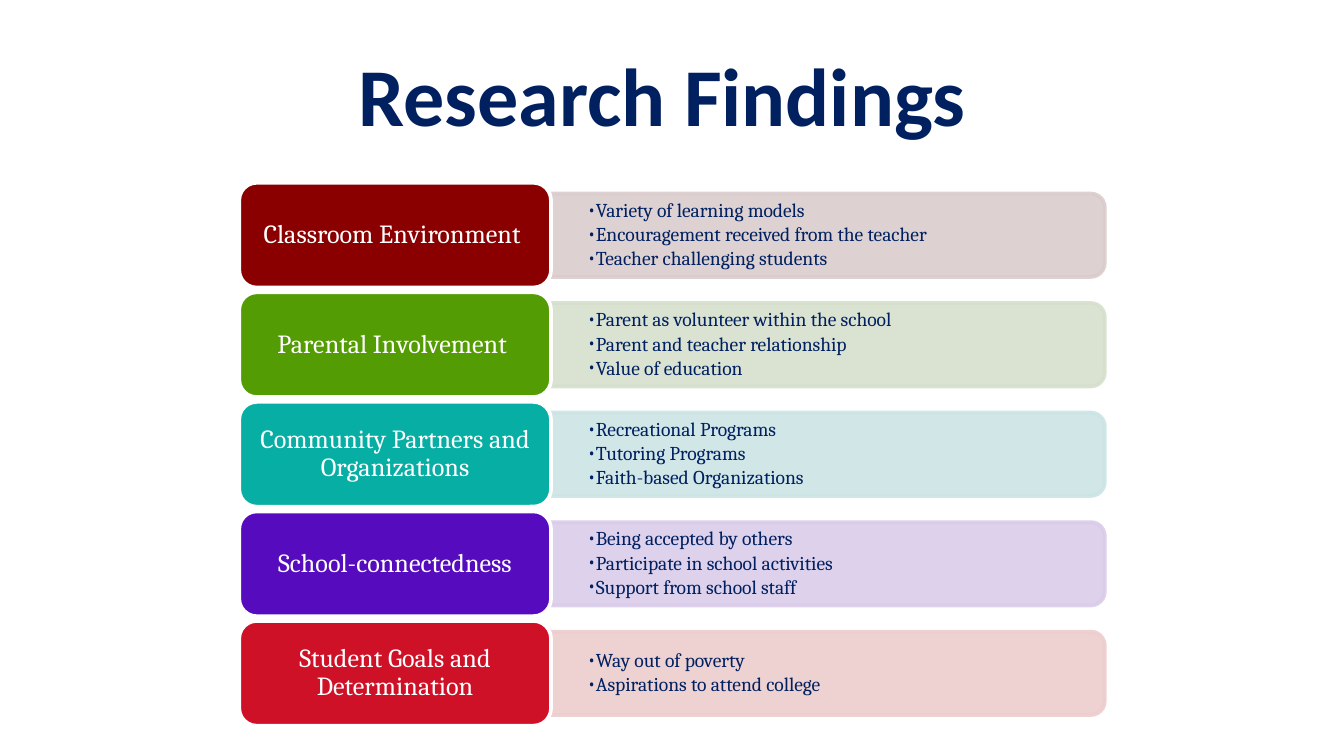
import pptx
import pptx.util
import pptx.dml.color
import pptx.enum.shapes
import pptx.enum.text
import pptx.oxml.ns
import lxml.etree

Inches = pptx.util.Inches
Pt = pptx.util.Pt
RGBColor = pptx.dml.color.RGBColor
MSO_SHAPE = pptx.enum.shapes.MSO_SHAPE
PP_ALIGN = pptx.enum.text.PP_ALIGN
MSO_ANCHOR = pptx.enum.text.MSO_ANCHOR
qn = pptx.oxml.ns.qn

NAVY = RGBColor(0x00, 0x20, 0x60)
WHITE = RGBColor(0xFF, 0xFF, 0xFF)
MAROON, PALE_MAROON = RGBColor(0x8A, 0x00, 0x00), RGBColor(0xDA, 0xCC, 0xCC)
GREEN, PALE_GREEN = RGBColor(0x54, 0x9C, 0x03), RGBColor(0xD6, 0xDF, 0xCC)
TEAL, PALE_TEAL = RGBColor(0x07, 0xAE, 0xA4), RGBColor(0xCC, 0xE4, 0xE4)
PURPLE, PALE_PURPLE = RGBColor(0x56, 0x0C, 0xBE), RGBColor(0xDA, 0xCC, 0xE9)
RED, PALE_RED = RGBColor(0xCE, 0x11, 0x26), RGBColor(0xED, 0xCD, 0xCD)

TITLE = "Research Findings "
FINDINGS = [
    ("Classroom Environment ", MAROON, PALE_MAROON,
     ["Variety of learning models", "Encouragement received from the teacher",
      "Teacher challenging students"]),
    ("Parental Involvement ", GREEN, PALE_GREEN,
     ["Parent as volunteer within the school", "Parent and teacher relationship",
      "Value of education"]),
    ("Community Partners and Organizations", TEAL, PALE_TEAL,
     ["Recreational Programs", "Tutoring Programs", "Faith-based Organizations"]),
    ("School-connectedness", PURPLE, PALE_PURPLE,
     ["Being accepted by others", "Participate in school activities",
      "Support from school staff"]),
    ("Student Goals and Determination", RED, PALE_RED,
     ["Way out of poverty", "Aspirations to attend college"]),
]

FIRST_TOP, LAST_TOP = 1.36, 4.62
ROW_PITCH = (LAST_TOP - FIRST_TOP) / (len(FINDINGS) - 1)
LABEL_LEFT, LABEL_WIDTH, LABEL_HEIGHT = 1.78, 2.32, 0.78
PANEL_LEFT = LABEL_LEFT + LABEL_WIDTH
PANEL_LENGTH, PANEL_DEPTH = 4.12, 0.62
BULLETS_WIDTH, BULLETS_HEIGHT = 4.09, 0.56


def add_block(page, kind, left, top, width, height, fill, line):
    block = page.shapes.add_shape(kind, Inches(left), Inches(top),
                                  Inches(width), Inches(height))
    block.shadow.inherit = False
    block.fill.solid()
    block.fill.fore_color.rgb = fill
    block.line.color.rgb = line
    block.line.width = Pt(2)
    return block


def set_frame(box, side, edge):
    frame = box.text_frame
    frame.word_wrap = True
    frame.vertical_anchor = MSO_ANCHOR.MIDDLE
    frame.margin_left = frame.margin_right = Inches(side)
    frame.margin_top = frame.margin_bottom = Inches(edge)
    return frame


def style(para, size, color, name="Cambria"):
    para.font.size = Pt(size)
    para.font.name = name
    para.font.color.rgb = color


def add_panel(page, middle, color):
    panel = add_block(page, MSO_SHAPE.ROUND_2_SAME_RECTANGLE,
                      PANEL_LEFT + (PANEL_LENGTH - PANEL_DEPTH) / 2,
                      middle - PANEL_LENGTH / 2,
                      PANEL_DEPTH, PANEL_LENGTH, color, color)
    panel.rotation = 90
    for tint in panel._element.spPr.iter(qn("a:srgbClr")):
        lxml.etree.SubElement(tint, qn("a:alpha"), val="90000")


def add_bullets(page, middle, points):
    box = page.shapes.add_textbox(Inches(PANEL_LEFT), Inches(middle - BULLETS_HEIGHT / 2),
                                  Inches(BULLETS_WIDTH), Inches(BULLETS_HEIGHT))
    frame = set_frame(box, 0.27, 0.14)
    for index, point in enumerate(points):
        para = frame.paragraphs[0] if index == 0 else frame.add_paragraph()
        para.text = point
        para.level = 1
        para.line_spacing = 0.9
        para.space_after = Pt(1.6)
        properties = para._p.get_or_add_pPr()
        properties.set("marL", str(Inches(0.06)))
        properties.set("indent", str(-Inches(0.06)))
        lxml.etree.SubElement(properties, qn("a:buFont"), typeface="Cambria")
        lxml.etree.SubElement(properties, qn("a:buChar"), char="•")
        style(para, 10.5, NAVY)


def add_label(page, top, text, color):
    label = add_block(page, MSO_SHAPE.ROUNDED_RECTANGLE, LABEL_LEFT, top,
                      LABEL_WIDTH, LABEL_HEIGHT, color, WHITE)
    para = set_frame(label, 0.06, 0.03).paragraphs[0]
    para.text = text
    para.alignment = PP_ALIGN.CENTER
    para.line_spacing = 0.9
    style(para, 14, WHITE)


deck = pptx.Presentation()
deck.slide_width = Inches(10)
deck.slide_height = deck.slide_width * 9 // 16
page = deck.slides.add_slide(deck.slide_layouts[5])

title = page.shapes.title
title.left, title.top = Inches(0.5), Inches(0.23)
title.width, title.height = Inches(9), Inches(0.94)
heading = set_frame(title, 0.1, 0.05).paragraphs[0]
heading.text = TITLE
heading.alignment = PP_ALIGN.CENTER
style(heading, 44, NAVY, "Calibri")
heading.font.bold = True

for row, (name, color, pale, points) in enumerate(FINDINGS):
    top = FIRST_TOP + row * ROW_PITCH
    middle = top + LABEL_HEIGHT / 2
    add_panel(page, middle, pale)
    add_bullets(page, middle, points)
    add_label(page, top, name, color)

deck.save("out.pptx")
